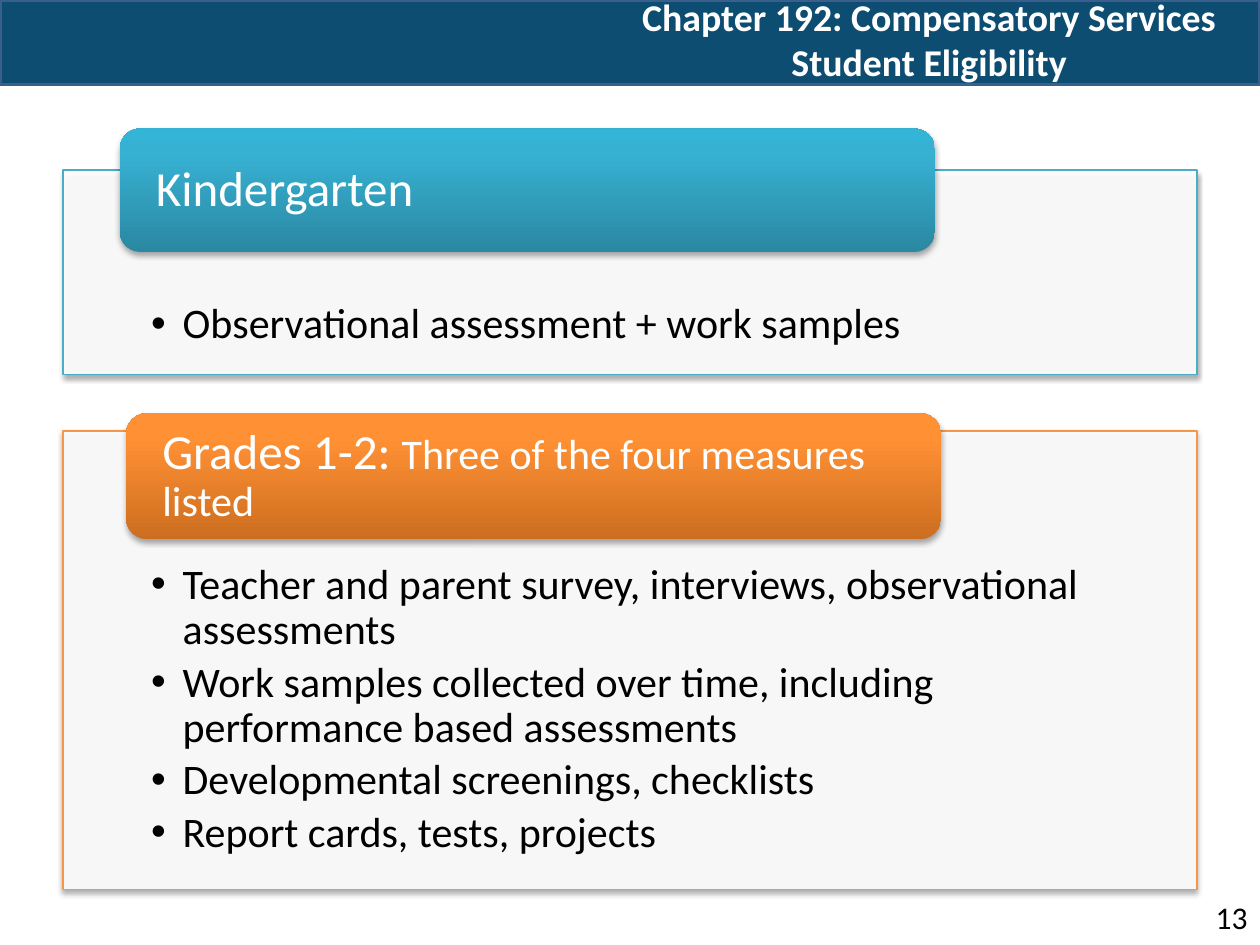
"""Build the student eligibility slide with two headed panels."""
from lxml.etree import SubElement
from pptx import Presentation
from pptx.dml.color import RGBColor
from pptx.enum.shapes import MSO_SHAPE
from pptx.enum.text import MSO_ANCHOR, MSO_AUTO_SIZE, PP_ALIGN
from pptx.oxml.ns import qn
from pptx.util import Inches, Pt

FRAME = dict(word_wrap=True, auto_size=MSO_AUTO_SIZE.NONE)
PANELS = [
    dict(box=(2, 5.4, 36, 6.48), tab=(3.8, 4.08, 25.88, 3.92), line="4BACC6",
         stops=[(0, "2A88A2"), (80, "37B1D2"), (100, "34B4D6")],
         head=[("Kindergarten", 28)],
         items=["Observational assessment + work samples"]),
    dict(box=(2, 13.68, 36, 14.56), tab=(4, 13.12, 25.88, 4), line="F79646",
         stops=[(0, "CC6E20"), (80, "FF9034"), (100, "FF9136")],
         head=[("Grades 1-2: ", 28), ("Three of the four measures listed", 24)],
         items=["Teacher and parent survey, interviews, observational assessments",
                "Work samples collected over time, including performance based assessments",
                "Developmental screenings, checklists",
                "Report cards, tests, projects"]),
]


def rgb(value):
    return RGBColor.from_string(value)


def apply(obj, values):
    for name, value in values.items():
        setattr(obj, name, value)


def add(parent, tag, **attrs):
    return SubElement(parent, qn(tag), {k: str(v) for k, v in attrs.items()})


class Deck:
    font = "Calibri"
    columns, rows = 40, 30

    def __init__(self, width, height):
        self.prs = Presentation()
        apply(self.prs, dict(slide_width=Inches(width), slide_height=Inches(height)))
        self.s = self.prs.slides.add_slide(self.prs.slide_layouts[3])

    def place(self, box):
        dx = self.prs.slide_width / self.columns
        dy = self.prs.slide_height / self.rows
        return [round(n * unit) for n, unit in zip(box, (dx, dy, dx, dy))]

    def frame(self, sp, insets, anchor):
        tf = sp.text_frame
        sides = ("margin_left", "margin_top", "margin_right", "margin_bottom")
        apply(tf, FRAME | dict(vertical_anchor=anchor))
        apply(tf, dict(zip(sides, map(Inches, insets))))
        return tf

    def style(self, r, size, color, bold=False):
        apply(r.font, dict(name=self.font, size=Pt(size), bold=bold))
        r.font.color.rgb = rgb(color)

    def holder(self, idx, box):
        sp = self.s.placeholders[idx]
        apply(sp, dict(zip(("left", "top", "width", "height"), self.place(box))))
        sp.element.getparent().append(sp.element)
        return sp

    def title(self, text, box):
        tf = self.frame(self.holder(0, box), (0.1, 0.05, 0.1, 0.05), MSO_ANCHOR.MIDDLE)
        p = tf.paragraphs[0]
        p.text = text
        p.alignment = PP_ALIGN.CENTER
        for r in p.runs:
            self.style(r, 21.6, "FFFFFF", True)

    def shape(self, kind, box, fill=None, line=None, weight=0.75):
        sp = self.s.shapes.add_shape(kind, *self.place(box))
        sp.shadow.inherit = False
        if fill:
            sp.fill.solid()
            sp.fill.fore_color.rgb = rgb(fill)
        if line:
            sp.line.color.rgb = rgb(line)
            sp.line.width = Pt(weight)
        else:
            sp.line.fill.background()
        return sp

    def shadow(self, sp):
        effects = sp.element.spPr.find(qn("a:effectLst"))
        outer = add(effects, "a:outerShdw", blurRad=Pt(3.1), dist=Pt(1.8),
                    dir=5400000, rotWithShape=0)
        add(add(outer, "a:srgbClr", val="000000"), "a:alpha", val=35000)

    def panel(self, box, line):
        sp = self.shape(MSO_SHAPE.RECTANGLE, box, "FFFFFF", line)
        add(sp.element.spPr.find(qn("a:solidFill"))[0], "a:alpha", val=90000)
        self.shadow(sp)

    def bullets(self, idx, box, items):
        tf = self.frame(self.holder(idx, box), (0.7, 1.05, 0.7, 0.19), MSO_ANCHOR.TOP)
        for i, text in enumerate(items):
            p = tf.add_paragraph() if i else tf.paragraphs[0]
            apply(p, dict(line_spacing=0.9, space_before=Pt(0), space_after=Pt(4)))
            pPr = p._p.get_or_add_pPr()
            apply_indent = dict(marL=Inches(0.25), indent=Inches(-0.25))
            for name, value in apply_indent.items():
                pPr.set(name, str(value))
            add(pPr, "a:buChar", char="•")
            r = p.add_run()
            r.text = text
            self.style(r, 24, "000000")

    def heading(self, box, stops, runs):
        sp = self.shape(MSO_SHAPE.ROUNDED_RECTANGLE, box)
        sp.fill.gradient()
        sp.fill.gradient_angle = 90
        colors = sp.element.spPr.find(qn("a:gradFill")).find(qn("a:gsLst"))
        for stop in list(colors):
            colors.remove(stop)
        for pos, color in stops:
            add(add(colors, "a:gs", pos=pos * 1000), "a:srgbClr", val=color)
        self.shadow(sp)
        p = self.frame(sp, (0.24, 0, 0.24, 0), MSO_ANCHOR.MIDDLE).paragraphs[0]
        apply(p, dict(alignment=PP_ALIGN.LEFT, line_spacing=0.9))
        for text, size in runs:
            r = p.add_run()
            r.text = text
            self.style(r, size, "FFFFFF")

    def number(self, text, box):
        sp = self.s.shapes.add_textbox(*self.place(box))
        p = self.frame(sp, (0.1, 0.05, 0.1, 0.05), MSO_ANCHOR.TOP).paragraphs[0]
        p.alignment = PP_ALIGN.RIGHT
        r = p.add_run()
        r.text = text
        self.style(r, 18, "000000")


def main():
    deck = Deck(10, 7.5)
    deck.shape(MSO_SHAPE.RECTANGLE, (0, 0, 40, 2.68), "0E4D72", "3A5F8C", 2)
    deck.number("13", (37.32, 28.32, 2.68, 1.6))
    deck.title("Chapter 192: Compensatory Services\nStudent Eligibility", (19, 0, 21, 2.48))
    for idx, panel in enumerate(PANELS, 1):
        deck.panel(panel["box"], panel["line"])
        deck.bullets(idx, panel["box"], panel["items"])
        deck.heading(panel["tab"], panel["stops"], panel["head"])
    deck.prs.save("out.pptx")


if __name__ == "__main__":
    main()
